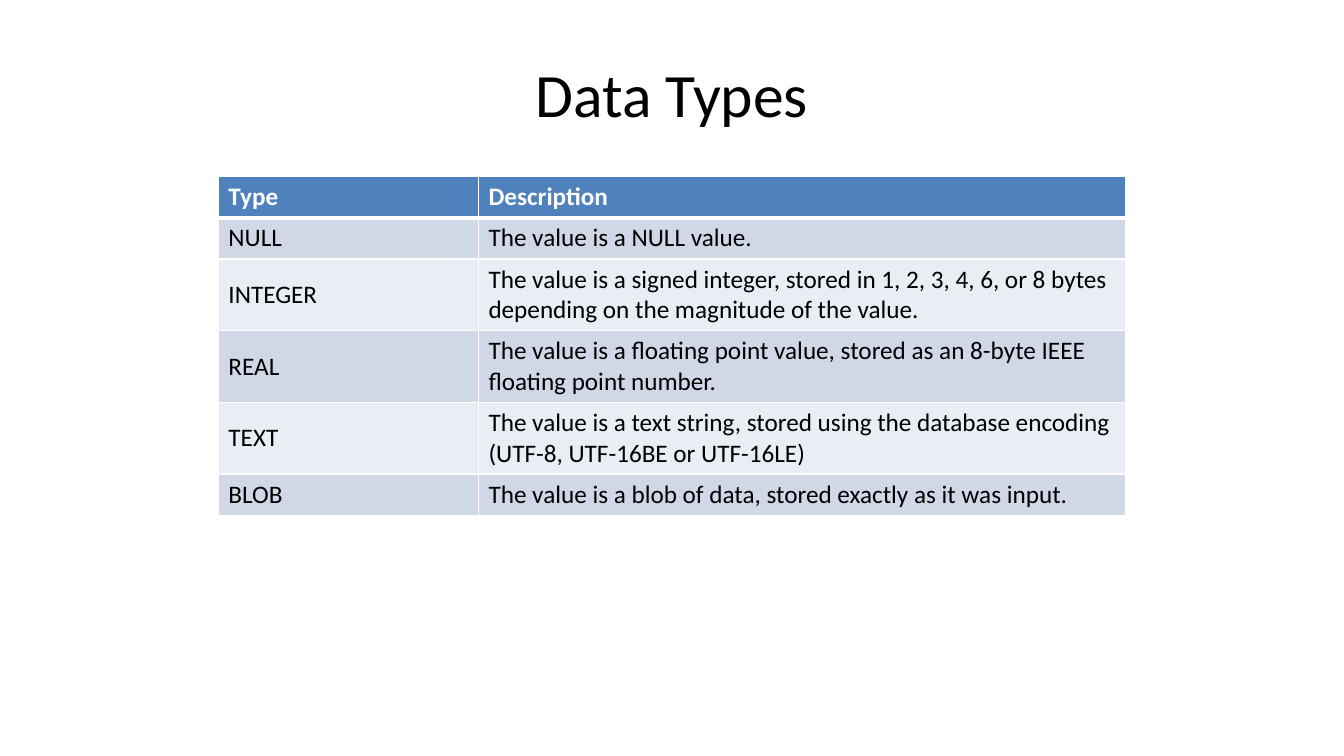
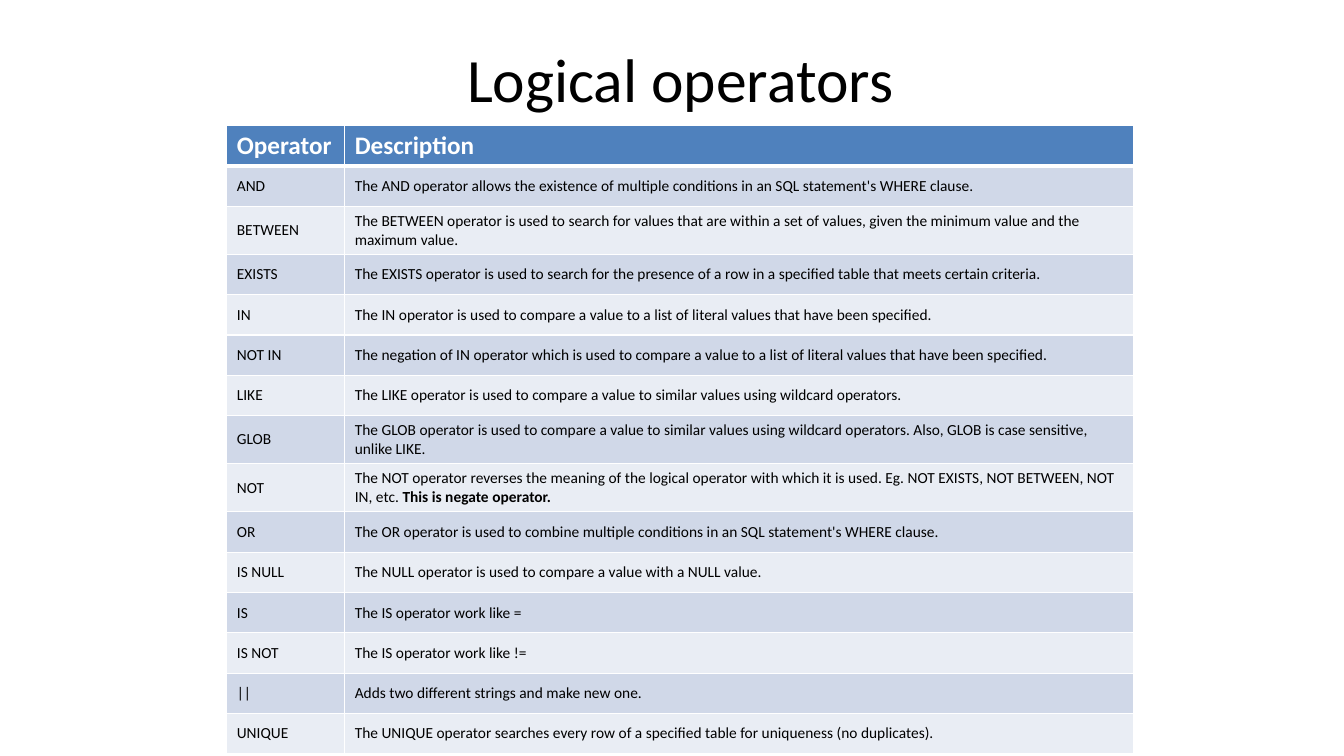
from pptx import Presentation
from pptx.dml.color import RGBColor
from pptx.enum.text import MSO_ANCHOR, PP_ALIGN
from pptx.oxml.ns import qn
from pptx.util import Pt
from lxml.etree import SubElement

PX = 3048  # EMU per px, 300 px to the inch
FONT = "Calibri"
COLORS = {
    "header": "4F81BD",
    "odd": "D0D8E8",
    "even": "E9EDF4",
    "white": "FFFFFF",
    "black": "000000",
}


def add_text(p, text, size, color="black", bold=False):
    r = p.add_run()
    r.text = text
    r.font.name = FONT
    r.font.size = Pt(size)
    r.font.bold = bold
    r.font.color.rgb = RGBColor.from_string(COLORS[color])


def add_border(cell, side, width):
    ln = SubElement(cell._tc.get_or_add_tcPr(), qn(f"a:ln{side}"), w=str(Pt(width)))
    fill = SubElement(ln, qn("a:solidFill"))
    SubElement(fill, qn("a:srgbClr"), val=COLORS["white"])


# Content: a tuple holds a plain part and a bold part
slides = [
    {
        "title": "Data Types",
        "title_box": (200, 90, 3600, 375),
        "table_at": (650, 525),
        "cols": (774, 1926),
        "header_height": 123,
        "row_height": 123,
        "tall_rows": (),
        "size": 18,
        "rows": [
            ("Type", "Description"),
            ("NULL", "The value is a NULL value."),
            ("INTEGER", "The value is a signed integer, stored in 1, 2, 3, 4, 6, or 8 bytes "
                        "depending on the magnitude of the value."),
            ("REAL", "The value is a floating point value, stored as an 8-byte IEEE "
                     "floating point number."),
            ("TEXT", "The value is a text string, stored using the database encoding "
                     "(UTF-8, UTF-16BE or UTF-16LE)"),
            ("BLOB", "The value is a blob of data, stored exactly as it was input."),
        ],
    },
    {
        "title": "Logical operators",
        "title_box": (675, 75, 2700, 315),
        "table_at": (675, 372),
        "cols": (351, 2349),
        "header_height": 117,
        "row_height": 120,
        "tall_rows": ("BETWEEN", "GLOB", "NOT"),
        "size": 11,
        "rows": [
            ("Operator", "Description"),
            ("AND", "The AND operator allows the existence of multiple conditions in an SQL "
                    "statement's WHERE clause."),
            ("BETWEEN", "The BETWEEN operator is used to search for values that are within a set "
                        "of values, given the minimum value and the maximum value."),
            ("EXISTS", "The EXISTS operator is used to search for the presence of a row in a "
                       "specified table that meets certain criteria."),
            ("IN", "The IN operator is used to compare a value to a list of literal values "
                   "that have been specified."),
            ("NOT IN", "The negation of IN operator which is used to compare a value to a list "
                       "of literal values that have been specified."),
            ("LIKE", "The LIKE operator is used to compare a value to similar values using "
                     "wildcard operators."),
            ("GLOB", "The GLOB operator is used to compare a value to similar values using "
                     "wildcard operators. Also, GLOB is case sensitive, unlike LIKE."),
            ("NOT", ("The NOT operator reverses the meaning of the logical operator with which "
                     "it is used. Eg. NOT EXISTS, NOT BETWEEN, NOT IN, etc. ",
                     "This is negate operator.")),
            ("OR", "The OR operator is used to combine multiple conditions in an SQL "
                   "statement's WHERE clause."),
            ("IS NULL", "The NULL operator is used to compare a value with a NULL value."),
            ("IS", "The IS operator work like ="),
            ("IS NOT", "The IS operator work like !="),
            ("||", "Adds two different strings and make new one."),
            ("UNIQUE", "The UNIQUE operator searches every row of a specified table for "
                       "uniqueness (no duplicates)."),
        ],
    },
]

prs = Presentation()
prs.slide_width, prs.slide_height = 4000 * PX, 2250 * PX

for data in slides:
    s = prs.slides.add_slide(prs.slide_layouts[5])

    # Title
    sp = s.shapes.title
    sp.left, sp.top, sp.width, sp.height = [v * PX for v in data["title_box"]]
    tf = sp.text_frame
    tf.vertical_anchor = MSO_ANCHOR.MIDDLE
    p = tf.paragraphs[0]
    p.alignment = PP_ALIGN.CENTER
    add_text(p, data["title"], 44)

    # Table frame
    rows, cols = data["rows"], data["cols"]
    heights = [data["header_height"]]
    heights += [138 if name in data["tall_rows"] else data["row_height"] for name, _ in rows[1:]]
    left, top = data["table_at"]
    table = s.shapes.add_table(len(rows), len(cols), left * PX, top * PX,
                               sum(cols) * PX, sum(heights) * PX).table
    for col, width in zip(table.columns, cols):
        col.width = width * PX
    for row, height in zip(table.rows, heights):
        row.height = height * PX

    # Cells: blue header over a thick rule, then banded rows
    for i, row in enumerate(rows):
        header = i == 0
        band = "header" if header else "odd" if i % 2 else "even"
        for j, content in enumerate(row):
            cell = table.cell(i, j)
            cell.vertical_anchor = MSO_ANCHOR.MIDDLE
            for side in "LRTB":
                thick = (i, side) in ((0, "B"), (1, "T"))
                add_border(cell, side, 3 if thick else 1)
            cell.fill.solid()
            cell.fill.fore_color.rgb = RGBColor.from_string(COLORS[band])
            p = cell.text_frame.paragraphs[0]
            parts = content if isinstance(content, tuple) else (content,)
            for k, part in enumerate(parts):
                add_text(p, part, 18 if header else data["size"],
                         color="white" if header else "black", bold=header or k == 1)

prs.save("out.pptx")
